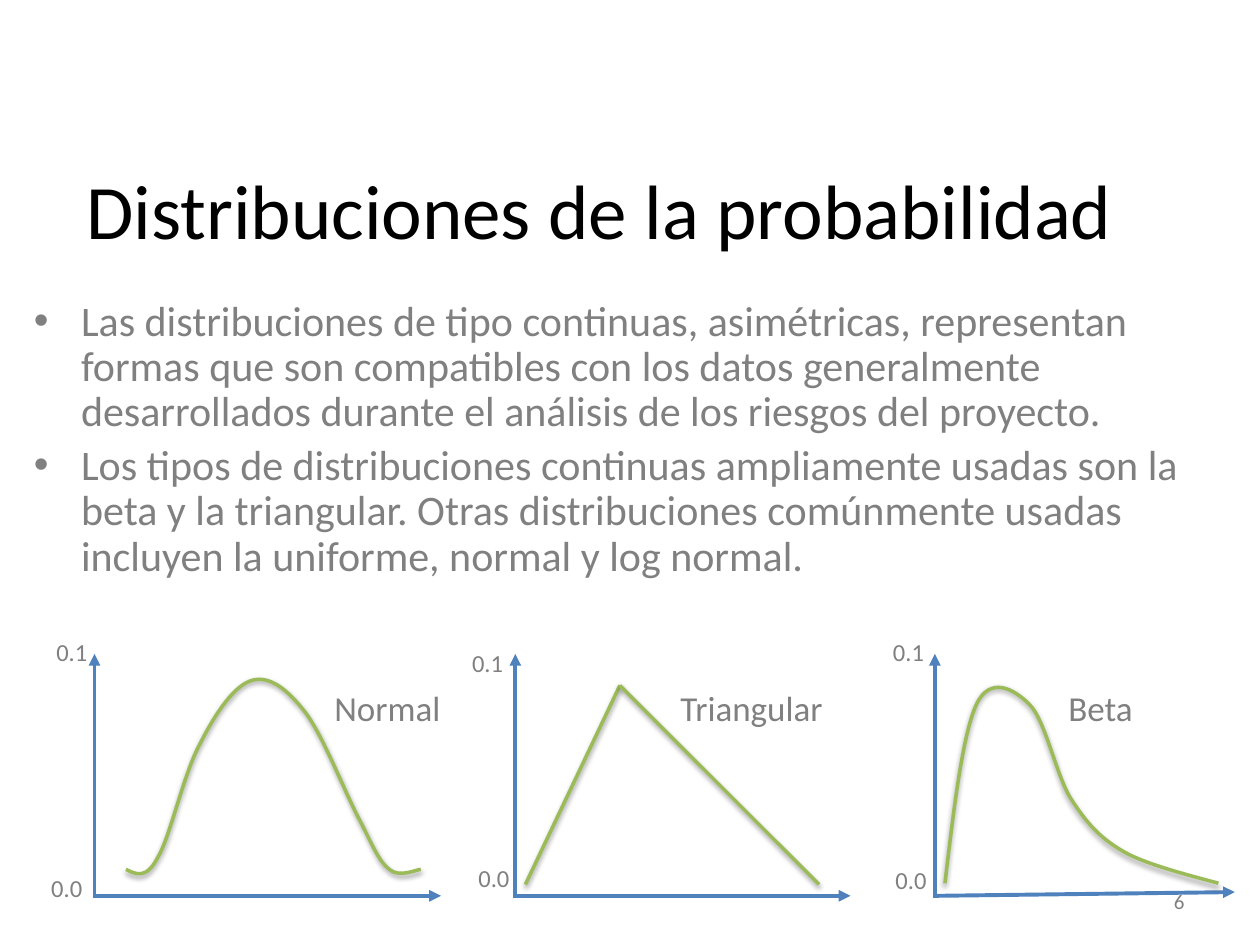
from dataclasses import dataclass

import pptx
import pptx.dml.color
import pptx.enum.shapes
import pptx.enum.text
import pptx.oxml
import pptx.oxml.ns
import pptx.util

PX = 9144  # EMU in one px, 100 px to the inch
BLACK = pptx.dml.color.RGBColor(0x00, 0x00, 0x00)
GREY = pptx.dml.color.RGBColor(0x80, 0x80, 0x80)
BLUE = pptx.dml.color.RGBColor(0x4F, 0x81, 0xBD)
GREEN = pptx.dml.color.RGBColor(0x9B, 0xBB, 0x59)
FONT = "Calibri"
BULLET_INDENT = pptx.util.Pt(27)
NAMESPACE = pptx.oxml.ns.nsdecls("a")
ALIGN = pptx.enum.text.PP_ALIGN
ANCHOR = pptx.enum.text.MSO_ANCHOR
AXIS_BOTTOM, AXIS_TOP, BASELINE = 713, 519, 711

Point = tuple[int, int]


@dataclass
class Distribution:
    name: str
    name_left: int
    name_width: int
    axis_left: int
    axis_end: Point
    low_label: Point
    high_label: Point
    points: list[Point]  # corners, or Bézier anchors and controls
    curved: bool = True


DISTRIBUTIONS = [
    Distribution(
        "Normal", 209, 197, 75, (350, 711), (24, 688), (28, 501),
        [(100, 690), (108, 694), (116, 698), (125, 681),
         (135, 665), (146, 613), (159, 590), (171, 566), (186, 544), (200, 540),
         (214, 536), (228, 547), (242, 565), (256, 583), (273, 627), (284, 648),
         (295, 669), (300, 683), (309, 690), (317, 697), (331, 690), (334, 690)],
    ),
    Distribution(
        "Triangular", 484, 225, 409, (675, 711), (363, 680), (358, 509),
        [(417, 702), (492, 544), (650, 702)], curved=False,
    ),
    Distribution(
        "Beta", 775, 197, 742, (980, 708), (694, 682), (692, 501),
        [(750, 701), (757, 642), (764, 583), (775, 559),
         (786, 536), (805, 547), (817, 559), (830, 572), (838, 615), (850, 634),
         (863, 654), (873, 665), (892, 676), (911, 687), (953, 697), (967, 701)],
    ),
]

BODY = [
    "Las distribuciones de tipo continuas, asimétricas, representan formas que son "
    "compatibles con los datos generalmente desarrollados durante el análisis de los "
    "riesgos del proyecto.",
    "Los tipos de distribuciones continuas ampliamente usadas son la beta y la "
    "triangular. Otras distribuciones comúnmente usadas incluyen la uniforme, normal "
    "y log normal.",
]


def write_text(shape, *texts: str, left: int, top: int, width: int, height: int,
               size: int, color=GREY, align=ALIGN.CENTER, anchor=ANCHOR.TOP,
               bullet: bool = False) -> None:
    """Place a shape and fill it with one paragraph for each text."""
    shape.left, shape.top = left * PX, top * PX
    shape.width, shape.height = width * PX, height * PX
    frame = shape.text_frame
    frame.word_wrap = True
    frame.auto_size = pptx.enum.text.MSO_AUTO_SIZE.NONE
    frame.vertical_anchor = anchor
    for index, text in enumerate(texts):
        paragraph = frame.paragraphs[0] if index == 0 else frame.add_paragraph()
        paragraph.alignment = align
        if bullet:
            properties = paragraph._p.get_or_add_pPr()
            properties.set("marL", str(int(BULLET_INDENT)))
            properties.set("indent", str(-int(BULLET_INDENT)))
            properties.append(pptx.oxml.parse_xml(f'<a:buFont {NAMESPACE} typeface="Arial"/>'))
            properties.append(pptx.oxml.parse_xml(f'<a:buChar {NAMESPACE} char="•"/>'))
            paragraph.line_spacing = 0.9
            if index:
                paragraph.space_before = pptx.util.Pt(0.2 * size)
        run = paragraph.add_run()
        run.text = text
        run.font.name = FONT
        run.font.size = pptx.util.Pt(size)
        run.font.color.rgb = color


def add_text(slide, *texts: str, **text_format) -> None:
    write_text(slide.shapes.add_textbox(0, 0, PX, PX), *texts, **text_format)


def style_line(shape, color, width: float, shadow: bool) -> None:
    shape.line.color.rgb = color
    shape.line.width = pptx.util.Pt(width)
    effect = (
        '<a:outerShdw blurRad="39370" dist="20320" dir="5400000" rotWithShape="0">'
        '<a:srgbClr val="000000"><a:alpha val="38000"/></a:srgbClr></a:outerShdw>'
        if shadow else ""
    )
    shape._element.spPr.append(
        pptx.oxml.parse_xml(f"<a:effectLst {NAMESPACE}>{effect}</a:effectLst>"))


def add_line(slide, start: Point, end: Point, color, width: float,
             arrow: bool = False, shadow: bool = False) -> None:
    line = slide.shapes.add_connector(
        pptx.enum.shapes.MSO_CONNECTOR.STRAIGHT, *(value * PX for value in start + end))
    style_line(line, color, width, shadow)
    if arrow:
        line.line._get_or_add_ln().append(
            pptx.oxml.parse_xml(f'<a:tailEnd {NAMESPACE} type="triangle"/>'))


def add_curve(slide, points: list[Point]) -> None:
    """Draw a chain of cubic segments that share their end points."""
    builder = slide.shapes.build_freeform(*points[0], scale=PX)
    builder.add_line_segments(points[1:], close=False)
    curve = builder.convert_to_shape()
    # Join every three straight steps into one cubic segment
    steps = curve._element.xpath(".//a:lnTo")
    for first in range(0, len(steps), 3):
        cubic = pptx.oxml.parse_xml(f"<a:cubicBezTo {NAMESPACE}/>")
        steps[first].addprevious(cubic)
        for step in steps[first:first + 3]:
            cubic.append(step[0])
            step.getparent().remove(step)
    curve.fill.background()
    style_line(curve, GREEN, 2, shadow=True)


def add_distribution(slide, distribution: Distribution) -> None:
    # Axes
    left = distribution.axis_left
    add_line(slide, (left, BASELINE), distribution.axis_end, BLUE, 2.25, arrow=True)
    add_line(slide, (left, AXIS_BOTTOM), (left, AXIS_TOP), BLUE, 2.25, arrow=True)
    # Density
    points = distribution.points
    if distribution.curved:
        add_curve(slide, points)
    else:
        for start, end in zip(points, points[1:]):
            add_line(slide, start, end, GREEN, 2, shadow=True)
    # Name and axis values
    add_text(slide, distribution.name, left=distribution.name_left, top=540,
             width=distribution.name_width, height=43, size=20)
    for text, (x, y) in (("0.0", distribution.low_label), ("0.1", distribution.high_label)):
        add_text(slide, text, left=x, top=y, width=58, height=33, size=14)


def main() -> None:
    presentation = pptx.Presentation()
    presentation.slide_width, presentation.slide_height = 1000 * PX, 750 * PX
    slide = presentation.slides.add_slide(presentation.slide_layouts[5])

    # Slide number, title and body
    add_text(slide, "6", left=717, top=695, width=233, height=40, size=12,
             align=ALIGN.RIGHT, anchor=ANCHOR.MIDDLE)
    write_text(slide.shapes.title, "Distribuciones de la probabilidad", left=43, top=129,
               width=866, height=73, size=44, color=BLACK, anchor=ANCHOR.MIDDLE)
    add_text(slide, *BODY, left=17, top=233, width=956, height=236, size=24,
             align=ALIGN.LEFT, bullet=True)

    # Distribution sketches
    for distribution in DISTRIBUTIONS:
        add_distribution(slide, distribution)

    presentation.save("out.pptx")


if __name__ == "__main__":
    main()
